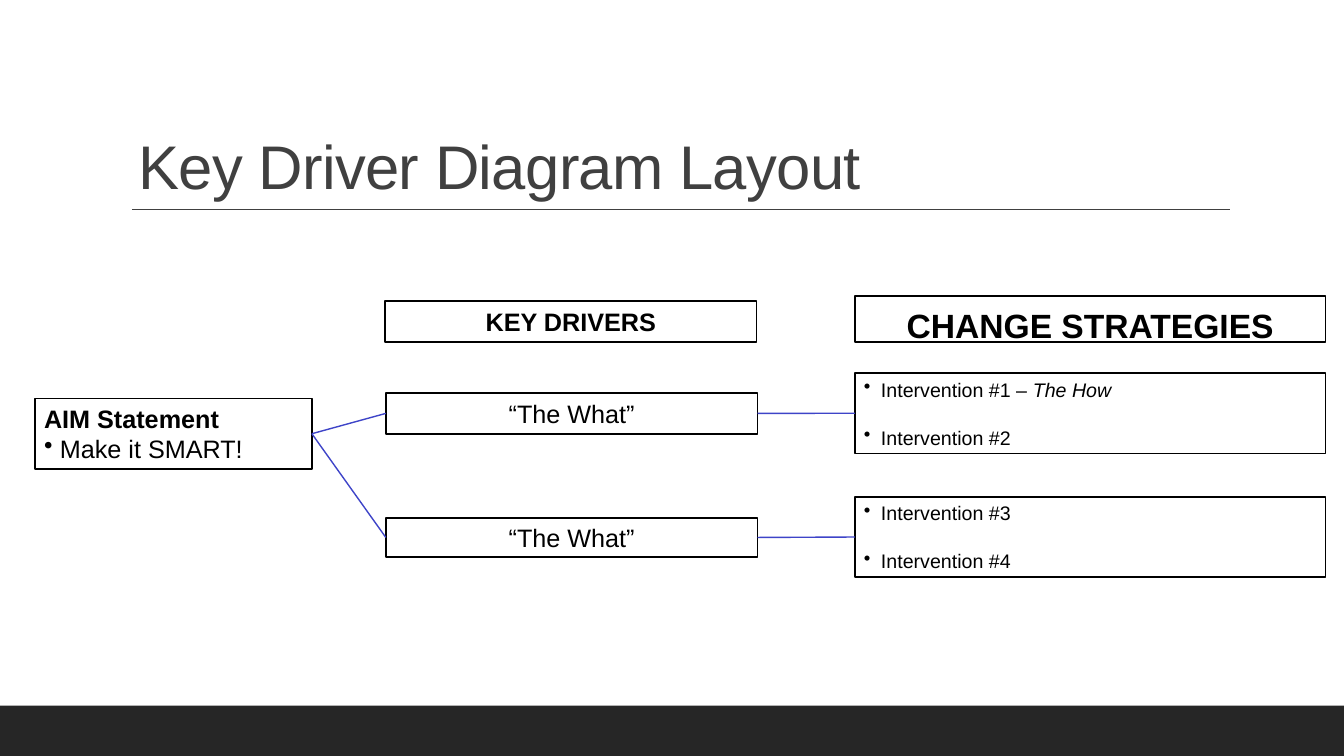
from lxml import etree
from pptx import Presentation
from pptx.dml.color import RGBColor
from pptx.enum.shapes import MSO_CONNECTOR, MSO_SHAPE
from pptx.enum.text import MSO_ANCHOR, PP_ALIGN
from pptx.oxml.ns import qn
from pptx.util import Pt

RECTANGLE = MSO_SHAPE.RECTANGLE
STRAIGHT = MSO_CONNECTOR.STRAIGHT
TOP, MIDDLE, BOTTOM = MSO_ANCHOR.TOP, MSO_ANCHOR.MIDDLE, MSO_ANCHOR.BOTTOM
LEFT, CENTER = PP_ALIGN.LEFT, PP_ALIGN.CENTER
LEFT_SIDE, RIGHT_SIDE = 1, 3

FONT = "Arial"
COLORS = {"paper": "FFFFFF", "ink": "000000", "title": "404040",
          "footer": "262626", "link": "3E44C8"}

DRIVER_X, DRIVER_W = 275.6, 265.5
STRATEGY_X, STRATEGY_W = 610.6, 336.2


def rgb(name):
    return RGBColor.from_string(COLORS[name])


def style_run(run, size, color="ink", bold=False, italic=False):
    font = run.font
    font.name, font.size = FONT, Pt(size)
    font.bold, font.italic = bold, italic
    font.color.rgb = rgb(color)


def add_bullet(paragraph, indent):
    """Give the paragraph a round bullet with a hanging indent in points."""
    properties = paragraph._p.get_or_add_pPr()
    properties.set("marL", str(Pt(indent)))
    properties.set("indent", str(-Pt(indent)))
    etree.SubElement(properties, qn("a:buChar")).set("char", "•")


def add_box(slide, left, top, width, height, lines, size, align=CENTER, bold=False):
    box = slide.shapes.add_shape(RECTANGLE, Pt(left), Pt(top), Pt(width), Pt(height))
    box.shadow.inherit = False
    box.fill.solid()
    box.fill.fore_color.rgb = rgb("paper")
    box.line.color.rgb = rgb("ink")
    box.line.width = Pt(1.25)
    frame = box.text_frame
    frame.word_wrap = True
    frame.vertical_anchor = MIDDLE
    frame.margin_left = frame.margin_right = Pt(6.5)
    frame.margin_top = frame.margin_bottom = Pt(3)
    frame.text = "\n".join(lines)
    for paragraph in frame.paragraphs:
        paragraph.alignment = align
        for run in paragraph.runs:
            style_run(run, size, bold=bold)
    return box


def add_aim(slide):
    aim = add_box(slide, 25, 284.6, 197.8, 50.4,
                  ["AIM Statement", "Make it SMART!"], 18, LEFT)
    heading, goal = aim.text_frame.paragraphs
    heading.runs[0].font.bold = True
    add_bullet(goal, 11.3)
    return aim


def add_interventions(slide, top, names):
    box = add_box(slide, STRATEGY_X, top, STRATEGY_W, 57.6, names, 14, LEFT)
    for index, paragraph in enumerate(box.text_frame.paragraphs):
        paragraph.space_before = Pt(17.5 if index else 0)
        add_bullet(paragraph, 12.2)
    return box


def add_line(slide, color, start=(0, 0), end=(0, 0)):
    line = slide.shapes.add_connector(STRAIGHT, *map(Pt, (*start, *end)))
    line.line.color.rgb = rgb(color)
    line.line.width = Pt(1)
    etree.SubElement(line._element.spPr, qn("a:effectLst"))
    return line


def link(slide, source, target):
    line = add_line(slide, "link")
    line.begin_connect(source, RIGHT_SIDE)
    line.end_connect(target, LEFT_SIDE)


def add_footer(slide):
    footer = slide.shapes.add_shape(RECTANGLE, 0, Pt(504), Pt(960), Pt(36))
    footer.shadow.inherit = False
    footer.fill.solid()
    footer.fill.fore_color.rgb = rgb("footer")
    footer.line.fill.background()


def add_title(slide, text):
    title = slide.shapes.add_textbox(Pt(91.6), Pt(85), Pt(792), Pt(63.4))
    frame = title.text_frame
    frame.word_wrap = True
    frame.vertical_anchor = BOTTOM
    frame.text = text
    paragraph = frame.paragraphs[0]
    paragraph.line_spacing = 0.9
    run = paragraph.runs[0]
    style_run(run, 44, "title")
    run._r.get_or_add_rPr().set("spc", "-50")


def main():
    deck = Presentation()
    deck.slide_width, deck.slide_height = Pt(960), Pt(540)
    slide = deck.slides.add_slide(deck.slide_layouts[6])

    add_footer(slide)
    add_line(slide, "title", (94.3, 149.5), (878.8, 149.5))
    add_title(slide, "Key Driver Diagram Layout")

    add_box(slide, DRIVER_X - 0.6, 215, DRIVER_W, 29.4, ["KEY DRIVERS"], 18, bold=True)
    strategies = add_box(slide, STRATEGY_X, 211.2, STRATEGY_W, 33.2,
                         ["CHANGE STRATEGIES"], 24, bold=True)
    strategies.text_frame.vertical_anchor = TOP
    strategies.text_frame.margin_top = Pt(6.5)
    strategies.text_frame.margin_bottom = 0

    aim = add_aim(slide)
    branches = [
        (280.6, 29.4, 266.4, ["Intervention #1 – ", "Intervention #2"]),
        (369.8, 28.2, 354.8, ["Intervention #3", "Intervention #4"]),
    ]
    intervention_boxes = []
    for driver_top, driver_height, box_top, names in branches:
        driver = add_box(slide, DRIVER_X, driver_top, DRIVER_W, driver_height,
                         ["“The What”"], 18)
        interventions = add_interventions(slide, box_top, names)
        link(slide, aim, driver)
        link(slide, driver, interventions)
        intervention_boxes.append(interventions)

    how = intervention_boxes[0].text_frame.paragraphs[0].add_run()
    how.text = "The How"
    style_run(how, 14, italic=True)

    deck.save("out.pptx")


if __name__ == "__main__":
    main()
